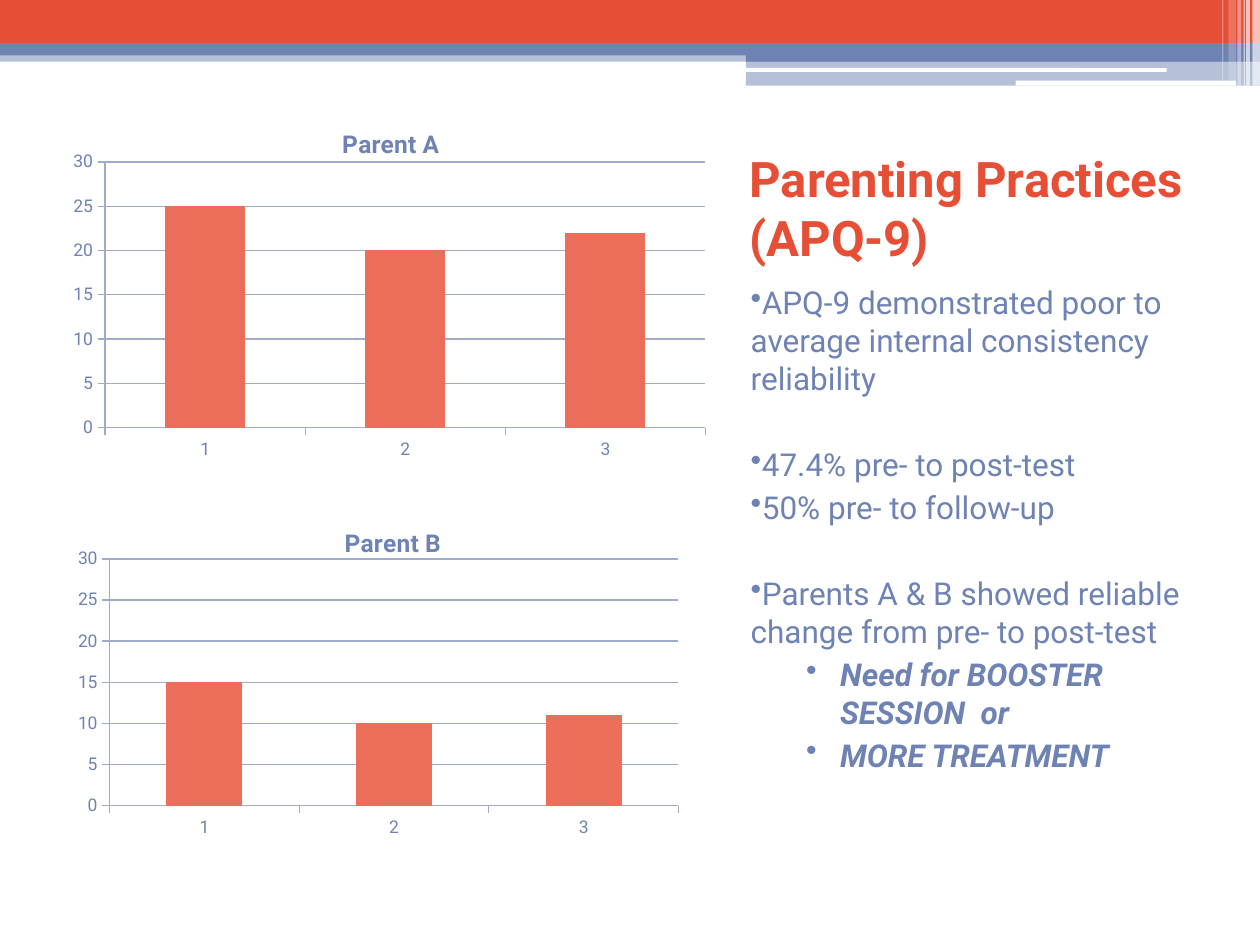
from lxml.etree import SubElement
from pptx import Presentation
from pptx.chart.data import CategoryChartData
from pptx.dml.color import RGBColor
from pptx.enum.chart import XL_CHART_TYPE, XL_TICK_MARK
from pptx.enum.shapes import MSO_SHAPE
from pptx.enum.text import MSO_ANCHOR
from pptx.oxml.ns import qn
from pptx.util import Inches, Pt

RED = RGBColor(0xE6, 0x4F, 0x36)
BLUE = RGBColor(0x6E, 0x83, 0xB3)
PALE = RGBColor(0xA0, 0xAA, 0xCC)
CORAL = RGBColor(0xEA, 0x6E, 0x59)
WHITE = RGBColor(0xFF, 0xFF, 0xFF)
FONT = "Roboto"

BANDS = [
    (0, 0.4, 10, 0.09, BLUE, 50),
    (0, 0, 10, 0.34, RED, 100),
    (0, 0.34, 10, 0.1, BLUE, 100),
    (5.92, 0.39, 4.08, 0.1, BLUE, 100),
    (5.92, 0.48, 4.08, 0.2, BLUE, 50),
]
LINES = [(5.91, 0.54, 3.35, 0.03), (8.06, 0.64, 1.75, 0.04)]
STRIPES = [
    (9.94, 0.06, 0.68, 65),
    (9.89, 0.03, 0.68, 65),
    (9.87, 0.01, 0.68, 60),
    (9.82, 0.03, 0.68, 40),
    (9.75, 0.06, 0.64, 20),
    (9.7, 0.01, 0.64, 30),
]
POINTS = [
    ("APQ-9 demonstrated poor to average internal consistency reliability", 0, 3),
    ("47.4% pre- to post-test", 0, 27.5),
    ("50% pre- to follow-up", 0, 3),
    ("Parents A & B showed reliable change from pre- to post-test", 0, 27.5),
    ("Need for BOOSTER SESSION  or", 1, 3),
    ("MORE TREATMENT", 1, 3),
]
INDENTS = [(0.01, 0), (0.72, -0.27)]
CHARTS = [
    ("Parent A", (25, 20, 22), (0.17, 0.85, 5.58, 2.98),
     (0.119, 0.146, 0.854, 0.708), (0.45, 0.04)),
    ("Parent B", (15, 10, 11), (0.5, 4, 5, 2.83),
     (0.074, 0.154, 0.903, 0.692), (0.44, 0.05)),
]


def apply(item, values):
    for name, value in values.items():
        setattr(item, name, value)


def style(font, size, color, **extra):
    apply(font, {"name": FONT, "size": Pt(size), **extra})
    font.color.rgb = color


def add_bar(slide, box, color, alpha=100, kind=MSO_SHAPE.RECTANGLE):
    bar = slide.shapes.add_shape(kind, *map(Inches, box))
    bar.shadow.inherit = False
    bar.fill.solid()
    bar.fill.fore_color.rgb = color
    bar.line.fill.background()
    if alpha < 100:
        tint = bar.fill._xPr.find(".//" + qn("a:srgbClr"))
        SubElement(tint, qn("a:alpha"), val=str(alpha * 1000))


def add_frame(slide, box, anchor):
    frame = slide.shapes.add_textbox(*map(Inches, box)).text_frame
    apply(frame, {"word_wrap": True, "vertical_anchor": anchor})
    return frame


def add_title(slide):
    frame = add_frame(slide, (5.85, 1.2, 3.7, 0.96), MSO_ANCHOR.BOTTOM)
    run = frame.paragraphs[0].add_run()
    run.text = "Parenting Practices (APQ-9)"
    style(run.font, 28, RED, bold=True)


def add_bullet(para, level):
    left, hang = INDENTS[level]
    props = para._p.get_or_add_pPr()
    props.set("marL", str(Inches(left)))
    props.set("indent", str(Inches(hang)))
    color = SubElement(props, qn("a:buClr"))
    SubElement(color, qn("a:srgbClr"), val=str(BLUE))
    SubElement(props, qn("a:buChar"), char="•")


def add_points(slide):
    frame = add_frame(slide, (5.85, 2.2, 3.7, 5.05), MSO_ANCHOR.TOP)
    for i, (text, level, gap) in enumerate(POINTS):
        para = frame.add_paragraph() if i else frame.paragraphs[0]
        apply(para, {"level": level, "space_before": Pt(gap)})
        add_bullet(para, level)
        run = para.add_run()
        run.text = text
        strong = level == 1
        style(run.font, 18, BLUE, bold=strong, italic=strong)


def set_layout(parent, index, values):
    for old in parent.findall(qn("c:layout")):
        parent.remove(old)
    layout = SubElement(parent, qn("c:layout"))
    manual = SubElement(layout, qn("c:manualLayout"))
    if len(values) == 4:
        SubElement(manual, qn("c:layoutTarget"), val="inner")
    for axis in "xy":
        SubElement(manual, qn(f"c:{axis}Mode"), val="edge")
    for key, value in zip("xywh", values):
        SubElement(manual, qn(f"c:{key}"), val=str(value))
    parent.insert(index, layout)


def add_graph(slide, name, values, box, plot_box, title_at):
    data = CategoryChartData()
    data.categories = ["1", "2", "3"]
    data.add_series("Series 1", values)
    chart = slide.shapes.add_chart(
        XL_CHART_TYPE.COLUMN_CLUSTERED, *map(Inches, box), data).chart
    style(chart.font, 10, BLUE)
    apply(chart, {"has_legend": False, "has_title": True})

    title = chart.chart_title
    title.include_in_layout = False
    run = title.text_frame.paragraphs[0].add_run()
    run.text = name
    style(run.font, 14, BLUE, bold=True)
    set_layout(title.element, 1, title_at)
    set_layout(chart.element.find(".//" + qn("c:plotArea")), 0, plot_box)

    plot = chart.plots[0]
    apply(plot, {"gap_width": 150, "vary_by_categories": False})
    fill = plot.series[0].format.fill
    fill.solid()
    fill.fore_color.rgb = CORAL

    scale = chart.value_axis
    apply(scale, {"minimum_scale": 0, "maximum_scale": 30, "major_unit": 5,
                  "has_major_gridlines": True})
    for axis in (chart.category_axis, scale):
        axis.major_tick_mark = XL_TICK_MARK.OUTSIDE
    for part in (chart.category_axis, scale, scale.major_gridlines):
        part.format.line.color.rgb = PALE
        part.format.line.width = Pt(0.75)


def main():
    deck = Presentation()
    apply(deck, {"slide_width": Inches(10), "slide_height": Inches(7.5)})
    slide = deck.slides.add_slide(deck.slide_layouts[6])
    for *box, color, alpha in BANDS:
        add_bar(slide, box, color, alpha)
    for box in LINES:
        add_bar(slide, box, WHITE, kind=MSO_SHAPE.ROUNDED_RECTANGLE)
    for left, width, height, alpha in STRIPES:
        add_bar(slide, (left, 0, width, height), WHITE, alpha)
    add_title(slide)
    add_points(slide)
    for graph in CHARTS:
        add_graph(slide, *graph)
    deck.save("out.pptx")


if __name__ == "__main__":
    main()
